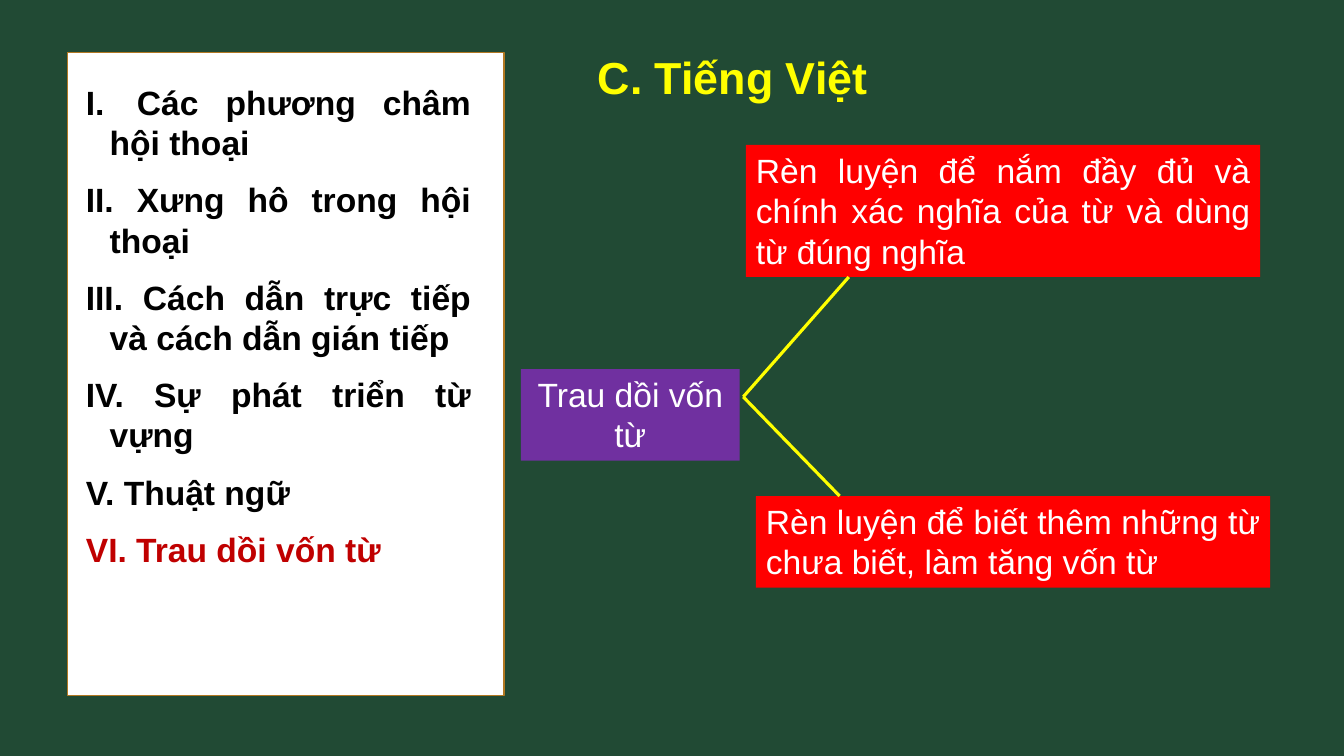
from dataclasses import dataclass

from lxml import etree
from pptx import Presentation
from pptx import util as u
from pptx.dml.color import RGBColor
from pptx.enum import shapes, text
from pptx.oxml import ns


@dataclass(frozen=True)
class Theme:
    font: str = "Arial"
    title_size: int = 32
    body_size: int = 24
    board: str = "214A34"
    panel: str = "FFFFFF"
    panel_edge: str = "B27822"
    ink: str = "000000"
    current: str = "C00000"
    accent: str = "FFFF00"
    topic: str = "7030A0"
    branch: str = "FF0000"
    light: str = "FFFFFF"


SECTIONS = [
    "Các phương châm hội thoại",
    "Xưng hô trong hội thoại",
    "Cách dẫn trực tiếp và cách dẫn gián tiếp",
    "Sự phát triển từ vựng",
    "Thuật ngữ",
    "Trau dồi vốn từ",
]
# Wording and box (left, top, width, height in cm)
BRANCHES = [
    ("Rèn luyện để nắm đầy đủ và chính xác nghĩa của từ và dùng từ đúng nghĩa",
     (18.8, 3.65, 12.96, 3.33)),
    ("Rèn luyện để biết thêm những từ chưa biết, làm tăng vốn từ",
     (19.05, 12.5, 12.96, 2.31)),
]
FORK = (18.73, 10)
BRANCH_ENDS = [(21.39, 6.98), (21.16, 12.5)]


def apply(obj, values):
    for name, value in values.items():
        setattr(obj, name, value)


class Board:
    def __init__(self, prs, theme):
        self.theme = theme
        self.s = prs.slides.add_slide(prs.slide_layouts[1])
        fill = self.s.background.fill
        fill.solid()
        fill.fore_color.rgb = RGBColor.from_string(theme.board)

    def place(self, sp, box):
        names = ("left", "top", "width", "height")
        apply(sp, {n: u.Cm(v) for n, v in zip(names, box)})

    def add_text(self, p, wording, color, size, bold=False, **para):
        apply(p, para)
        r = p.add_run()
        r.text = wording
        apply(r.font, {"name": self.theme.font, "size": u.Pt(size), "bold": bold})
        r.font.color.rgb = RGBColor.from_string(color)

    def title(self, wording, box):
        sp = self.s.shapes.title
        self.place(sp, box)
        tf = sp.text_frame
        apply(tf, {"word_wrap": True, "vertical_anchor": text.MSO_ANCHOR.TOP,
                   "auto_size": text.MSO_AUTO_SIZE.NONE})
        self.add_text(tf.paragraphs[0], wording, self.theme.accent,
                      self.theme.title_size, True,
                      alignment=text.PP_ALIGN.LEFT, line_spacing=0.9)

    def numbered_list(self, items, box):
        """Fill the body with Roman numbered items, the last one highlighted."""
        sp = self.s.placeholders[1]
        self.place(sp, box)
        tf = sp.text_frame
        apply(tf, {"word_wrap": True, "vertical_anchor": text.MSO_ANCHOR.TOP,
                   "auto_size": text.MSO_AUTO_SIZE.SHAPE_TO_FIT_TEXT})
        for i, item in enumerate(items):
            p = tf.add_paragraph() if i else tf.paragraphs[0]
            color = self.theme.current if item == items[-1] else self.theme.ink
            self.add_text(p, " " + item, color, self.theme.body_size, True,
                          alignment=text.PP_ALIGN.JUSTIFY, line_spacing=1.0,
                          space_before=u.Pt(6), space_after=u.Pt(6))
            pPr = p._p.get_or_add_pPr()
            pPr.set("marL", str(u.Cm(0.6)))
            pPr.set("indent", str(-u.Cm(0.6)))
            font = etree.SubElement(pPr, ns.qn("a:buFont"))
            font.set("typeface", self.theme.font)
            number = etree.SubElement(pPr, ns.qn("a:buAutoNum"))
            number.set("type", "romanUcPeriod")

    def rect(self, box, fill, edge=None):
        sp = self.s.shapes.add_shape(shapes.MSO_SHAPE.RECTANGLE, 0, 0, 0, 0)
        self.place(sp, box)
        sp.shadow.inherit = False
        sp.fill.solid()
        sp.fill.fore_color.rgb = RGBColor.from_string(fill)
        if edge:
            sp.line.color.rgb = RGBColor.from_string(edge)
            sp.line.width = u.Pt(1)
        else:
            sp.line.fill.background()
        return sp

    def panel(self, box):
        """Lay the white sheet behind the list."""
        sp = self.rect(box, self.theme.panel, self.theme.panel_edge)
        self.s.shapes.element.insert(2, sp.element)

    def label(self, wording, box, fill, align):
        tf = self.rect(box, fill).text_frame
        apply(tf, {"word_wrap": True, "vertical_anchor": text.MSO_ANCHOR.TOP,
                   "auto_size": text.MSO_AUTO_SIZE.SHAPE_TO_FIT_TEXT})
        self.add_text(tf.paragraphs[0], wording, self.theme.light,
                      self.theme.body_size, alignment=align)

    def line(self, start, end):
        ends = [u.Cm(v) for v in (*start, *end)]
        c = self.s.shapes.add_connector(shapes.MSO_CONNECTOR.STRAIGHT, *ends)
        c.line.color.rgb = RGBColor.from_string(self.theme.accent)
        c.line.width = u.Pt(2.25)
        etree.SubElement(c.element.spPr, ns.qn("a:effectLst"))


def main():
    prs = Presentation()
    apply(prs, {"slide_width": u.Cm(33.87), "slide_height": u.Cm(19.05)})
    theme = Theme()
    board = Board(prs, theme)
    board.panel((1.7, 1.32, 11, 16.2))
    board.numbered_list(SECTIONS, (1.91, 1.93, 10.21, 12.65))
    board.title("C. Tiếng Việt", (14.81, 1.27, 8.2, 3.68))
    board.label(SECTIONS[-1], (13.13, 9.3, 5.51, 2.31), theme.topic,
                text.PP_ALIGN.CENTER)
    for (wording, box), end in zip(BRANCHES, BRANCH_ENDS):
        board.label(wording, box, theme.branch, text.PP_ALIGN.JUSTIFY)
        board.line(FORK, end)
    prs.save("out.pptx")


if __name__ == "__main__":
    main()
